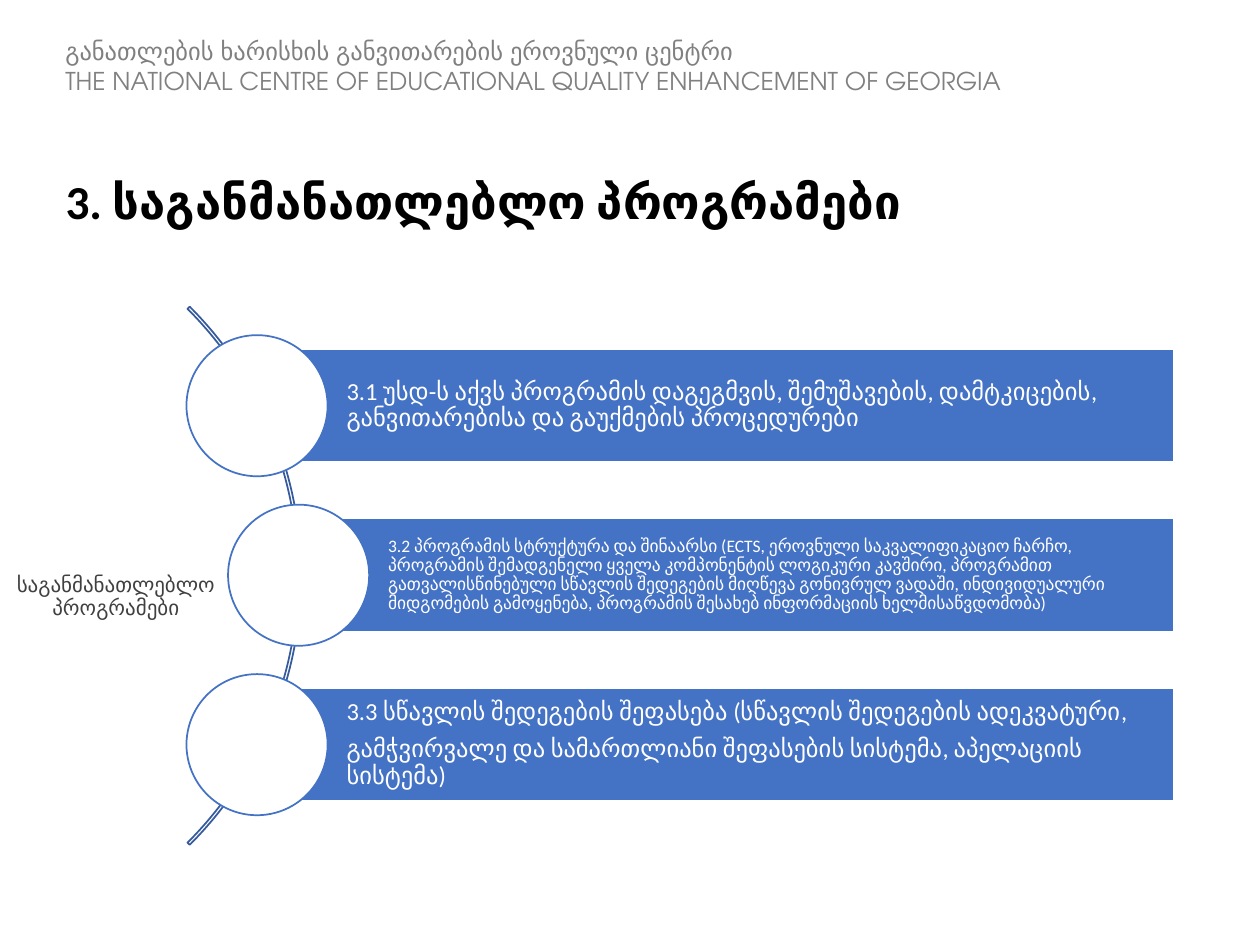
from pptx import Presentation
from pptx.dml.color import RGBColor
from pptx.enum.shapes import MSO_SHAPE
from pptx.enum.text import MSO_ANCHOR, PP_ALIGN
from pptx.util import Inches, Pt

TITLE = "3. საგანმანათლებლო პროგრამები"
SIDE = "საგანმანათლებლო პროგრამები"
HEAD = [
    "განათლების ხარისხის განვითარების ეროვნული ცენტრი",
    "THE NATIONAL CENTRE OF EDUCATIONAL QUALITY ENHANCEMENT OF GEORGIA",
]
ITEMS = [
    (2.04, 14, ["3.1 უსდ-ს აქვს პროგრამის დაგეგმვის, შემუშავების, დამტკიცების, განვითარებისა და გაუქმების პროცედურები"]),
    (2.37, 10, ["3.2 პროგრამის სტრუქტურა და შინაარსი (ECTS, ეროვნული საკვალიფიკაციო ჩარჩო, "
                "პროგრამის შემადგენელი ყველა კომპონენტის ლოგიკური კავშირი, პროგრამით "
                "გათვალისწინებული სწავლის შედეგების მიღწევა გონივრულ ვადაში, ინდივიდუალური "
                "მიდგომების გამოყენება, პროგრამის შესახებ ინფორმაციის ხელმისაწვდომობა)"]),
    (2.04, 14, ["3.3 სწავლის შედეგების შეფასება (სწავლის შედეგების ადეკვატური,",
                "გამჭვირვალე და სამართლიანი შეფასების სისტემა, აპელაციის სისტემა)"]),
]
COLORS = {"white": "FFFFFF", "blue": "4472C4", "arc": "365B9D",
          "black": "000000", "dark": "404040", "gray": "808080"}
RIGHT, TOP, STEP, BAR, DISC = 9.32, 2.77, 1.345, 0.9, 1.12


def color(name):
    return RGBColor.from_string(COLORS[name])


def shape(kind, box, fill=None, line=None):
    item = slide.shapes.add_shape(kind, *map(Inches, box))
    item.shadow.inherit = False
    if fill:
        item.fill.solid()
        item.fill.fore_color.rgb = color(fill)
    else:
        item.fill.background()
    if line:
        item.line.color.rgb = color(line)
        item.line.width = Pt(1)
    else:
        item.line.fill.background()
    return item


def write(item, lines, size, tint, face="Calibri", bold=False, align=PP_ALIGN.LEFT,
          anchor=MSO_ANCHOR.MIDDLE, lead=0.9, after=0):
    frame = item.text_frame
    frame.word_wrap = True
    frame.vertical_anchor = anchor
    frame.text = "\n".join(lines)
    for para in frame.paragraphs:
        para.alignment = align
        para.line_spacing = lead
        para.space_before = Pt(0)
        para.space_after = Pt(after)
        font = para.font
        font.name, font.size, font.bold = face, Pt(size), bold
        font.color.rgb = color(tint)
    return frame


deck = Presentation()
deck.slide_width, deck.slide_height = Inches(10), Inches(7.5)
slide = deck.slides.add_slide(deck.slide_layouts[5])

title = slide.shapes.title
title.left, title.top, title.width, title.height = map(Inches, (0.42, 1.08, 8.92, 1.08))
write(title, [TITLE], 27, "black", bold=True)

side = slide.shapes.add_textbox(*map(Inches, (0, 4.08, 1.84, 1.32)))
write(side, [SIDE], 12, "dark", align=PP_ALIGN.CENTER)

arc = shape(MSO_SHAPE.BLOCK_ARC, (-3.65, 1.55, 6.04, 6.04), line="arc")
for i, value in enumerate((189, 27, 0.004)):
    arc.adjustments[i] = value

for i, (left, size, lines) in enumerate(ITEMS):
    top = TOP + i * STEP
    bar = shape(MSO_SHAPE.RECTANGLE, (left, top, RIGHT - left, BAR), "blue", "white")
    frame = write(bar, lines, size, "white", after=size * 0.42)
    frame.margin_left = Inches(0.71)
    frame.margin_top = frame.margin_right = frame.margin_bottom = Inches(0.04)
    shape(MSO_SHAPE.OVAL, (left - DISC / 2, top + (BAR - DISC) / 2, DISC, DISC), "white", "blue")

head = shape(MSO_SHAPE.RECTANGLE, (0.42, 0.24, 7.73, 0.89), "white")
write(head, HEAD, 14, "gray", "TeX Gyre Adventor", anchor=MSO_ANCHOR.TOP, lead=1)

deck.save("out.pptx")
